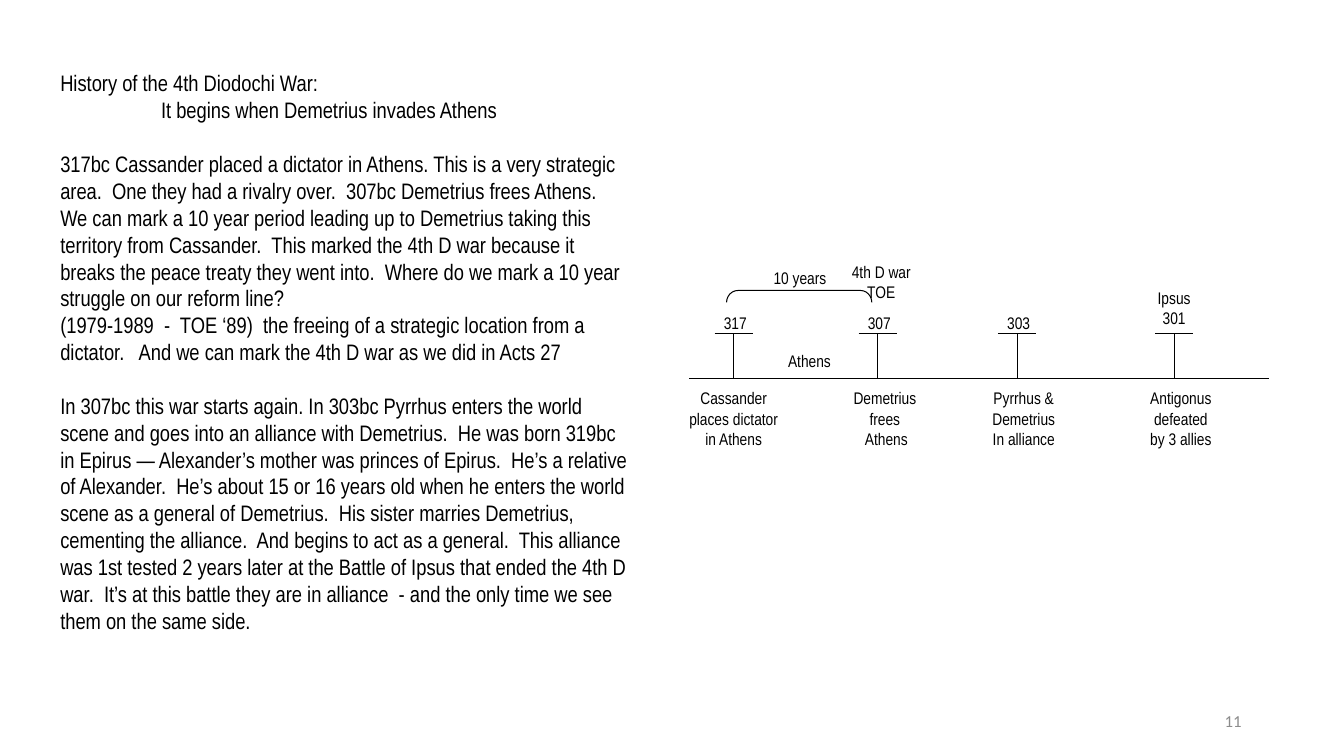
from lxml.etree import SubElement
from pptx import Presentation
from pptx.dml.color import RGBColor
from pptx.enum.shapes import MSO_CONNECTOR, MSO_SHAPE
from pptx.enum.text import MSO_ANCHOR, PP_ALIGN
from pptx.oxml.ns import qn
from pptx.util import Cm, Pt

BLACK = RGBColor(0x00, 0x00, 0x00)
GRAY = RGBColor(0x8C, 0x8C, 0x8C)
NARROW = "Arial Narrow"

# (text, left indent in cm, space before in points)
HISTORY = [
    ("History of the 4th Diodochi War:", 0, 0),
    ("It begins when Demetrius invades Athens", 2.54, 0),
    ("317bc Cassander placed a dictator in Athens. This is a very strategic area.  "
     "One they had a rivalry over.  307bc Demetrius frees Athens.  We can mark a 10 year "
     "period leading up to Demetrius taking this territory from Cassander.  This marked "
     "the 4th D war because it breaks the peace treaty they went into.  Where do we mark "
     "a 10 year struggle on our reform line?", 0, 19.2),
    ("(1979-1989  -  TOE ‘89)  the freeing of a strategic location from a dictator.   "
     "And we can mark the 4th D war as we did in Acts 27", 0, 0),
    ("In 307bc this war starts again. In 303bc Pyrrhus enters the world scene and goes "
     "into an alliance with Demetrius.  He was born 319bc in Epirus — Alexander’s mother "
     "was princes of Epirus.  He’s a relative of Alexander.  He’s about 15 or 16 years old "
     "when he enters the world scene as a general of Demetrius.  His sister marries "
     "Demetrius, cementing the alliance.  And begins to act as a general.  This alliance "
     "was 1st tested 2 years later at the Battle of Ipsus that ended the 4th D war.  It’s "
     "at this battle they are in alliance  - and the only time we see them on the same "
     "side.", 0, 19.2),
]

EVENTS = [
    {"x": 18.49, "year": ["317"], "event": ["Cassander places dictator in Athens"],
     "event_x": 18.49, "width": 2.54},
    {"x": 22.12, "year": ["307"], "event": ["Demetrius frees", " Athens"],
     "event_x": 22.3, "width": 2.54},
    {"x": 25.63, "year": ["303"], "event": ["Pyrrhus & Demetrius", "In alliance"],
     "event_x": 25.8, "width": 1.91},
    {"x": 29.59, "year": ["Ipsus", "301"], "event": ["Antigonus defeated by 3 allies"],
     "event_x": 29.76, "width": 1.91},
]

# (lines, centre, top, width, height) in cm
REMARKS = [
    (["10 years"], 20.16, 6.65, 1.75, 0.71),
    (["Athens"], 20.4, 8.74, 2.24, 0.71),
    (["4th D war", "TOE"], 22.21, 6.5, 1.75, 1.27),
]

AXIS_LEFT, AXIS_RIGHT, AXIS_Y = 17.37, 31.98, 9.53
TICK_TOP, TICK_HALF = 8.41, 0.48
BRACKET_X, BRACKET_Y, BRACKET_SPAN, BRACKET_DEPTH = 20.14, 7.47, 3.66, 0.3

# Comments above describe units only.
deck = Presentation()
deck.slide_width, deck.slide_height = Cm(33.87), Cm(19.05)
slide = deck.slides.add_slide(deck.slide_layouts[6])


def set_font(paragraph, size, name=NARROW, color=BLACK):
    paragraph.font.size = Pt(size)
    paragraph.font.name = name
    paragraph.font.color.rgb = color


def add_frame(left, top, width, height):
    frame = slide.shapes.add_textbox(Cm(left), Cm(top), Cm(width), Cm(height)).text_frame
    frame.word_wrap = True
    return frame


def add_label(lines, centre, top, width, height):
    frame = add_frame(centre - width / 2, top, width, height)
    frame.margin_left = frame.margin_right = Cm(0.1)
    frame.margin_top = frame.margin_bottom = Cm(0.1)
    frame.text = "\n".join(lines)
    for paragraph in frame.paragraphs:
        paragraph.alignment = PP_ALIGN.CENTER
        set_font(paragraph, 12)


def add_rule(x1, y1, x2, y2):
    rule = slide.shapes.add_connector(MSO_CONNECTOR.STRAIGHT, Cm(x1), Cm(y1), Cm(x2), Cm(y2))
    rule.line.color.rgb = BLACK
    rule.line.width = Pt(0.75)
    SubElement(rule._element.spPr, qn("a:effectLst"))


history = add_frame(1.27, 1.63, 14.83, 15.14)
history.text = "\n".join(text for text, _, _ in HISTORY)
for paragraph, (_, indent, before) in zip(history.paragraphs, HISTORY):
    paragraph._p.get_or_add_pPr().set("marL", str(Cm(indent)))
    paragraph.space_before = Pt(before)
    set_font(paragraph, 16)

add_rule(AXIS_LEFT, AXIS_Y, AXIS_RIGHT, AXIS_Y)
for stop in EVENTS:
    x = stop["x"]
    add_rule(x, TICK_TOP, x, AXIS_Y)
    add_rule(x - TICK_HALF, TICK_TOP, x + TICK_HALF, TICK_TOP)
    extra = len(stop["year"]) - 1
    add_label(stop["year"], x + 0.04 * (1 - extra), 7.77 - 0.63 * extra,
              1.04 + 0.87 * extra, 0.71 + 0.64 * extra)
    add_label(stop["event"], stop["event_x"], 9.68, stop["width"], 1.75)

bracket = slide.shapes.add_shape(
    MSO_SHAPE.LEFT_BRACKET,
    Cm(BRACKET_X - BRACKET_DEPTH / 2), Cm(BRACKET_Y - BRACKET_SPAN / 2),
    Cm(BRACKET_DEPTH), Cm(BRACKET_SPAN))
bracket.rotation = 90
bracket.adjustments[0] = 0.96
bracket.fill.background()
bracket.line.color.rgb = BLACK
bracket.line.width = Pt(0.75)
bracket.shadow.inherit = False

for remark in REMARKS:
    add_label(*remark)

page = add_frame(23.92, 17.66, 7.62, 1.01)
page.vertical_anchor = MSO_ANCHOR.MIDDLE
page.text = "11"
page.paragraphs[0].alignment = PP_ALIGN.RIGHT
set_font(page.paragraphs[0], 12, "Calibri", GRAY)

deck.save("out.pptx")
